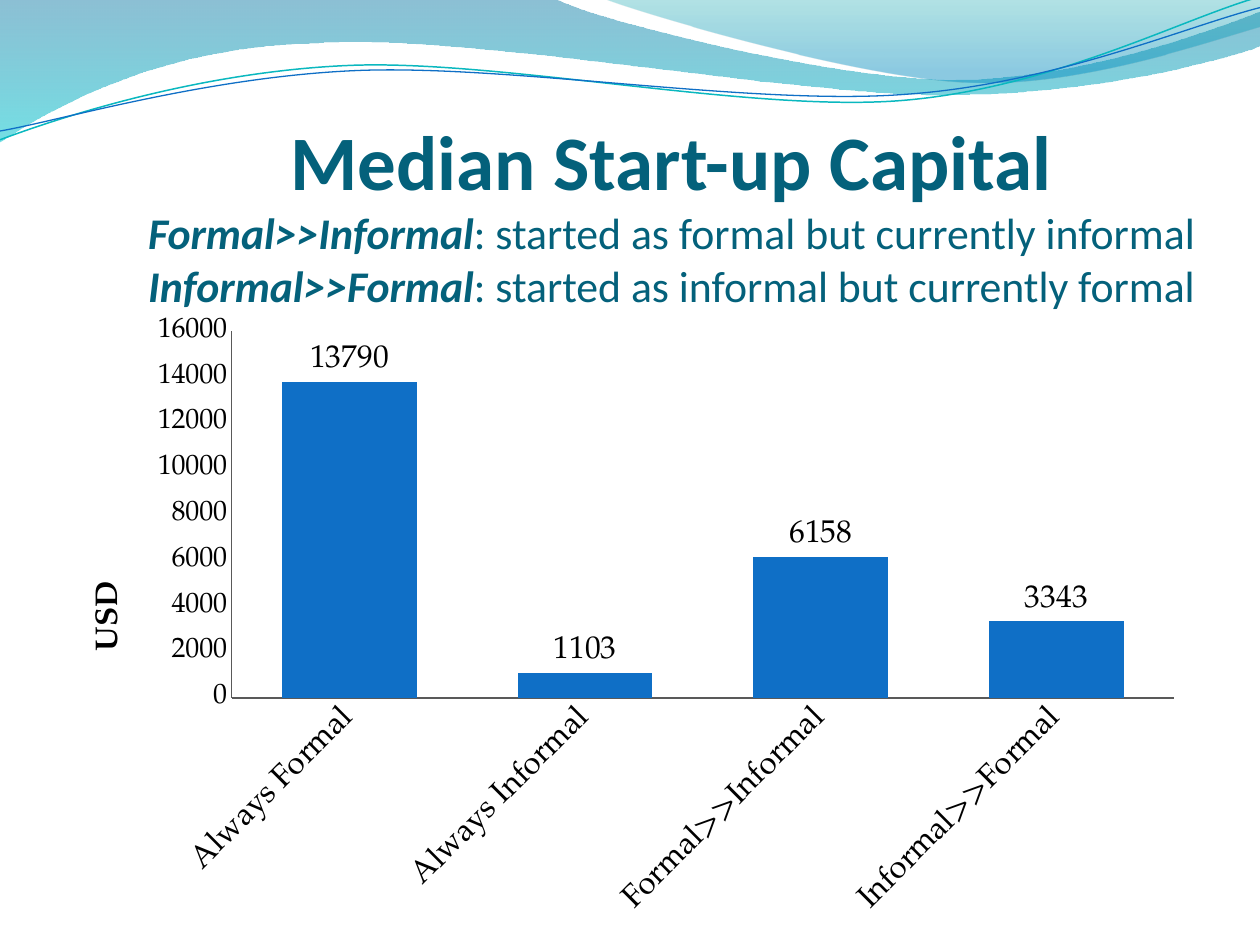
from math import cos, radians, sin

from lxml import etree
from pptx import Presentation
from pptx.chart.data import CategoryChartData
from pptx.dml.color import RGBColor
from pptx.enum.chart import XL_CHART_TYPE, XL_LABEL_POSITION, XL_TICK_MARK
from pptx.enum.text import MSO_ANCHOR, MSO_AUTO_SIZE, PP_ALIGN
from pptx.oxml.ns import qn
from pptx.util import Inches, Pt

COLUMNS = XL_CHART_TYPE.COLUMN_CLUSTERED
OUTSIDE_END = XL_LABEL_POSITION.OUTSIDE_END
NO_TICK = XL_TICK_MARK.NONE
TITLE_ONLY = 5

COLORS = {"title": "04617B", "blue": "0F6FC6", "teal": "0AB8BF",
          "text": "000000", "axis": "595959"}
TITLE_FONT, CHART_FONT = "Calibri", "TeX Gyre Pagella"

# Each outline is a list of points (lines) and six-number tuples (Bézier curves),
# in inches as seen on the slide, after the turn of the wave's box.
# Gradient stops are position, colour and opacity in percent.
WAVES = [
    {"box": (-0.01, -0.01, 10.02, 1.14), "turn": 0,
     "outline": [(0, 0), (4.4, -0.01), (4.76, 0.17, 6.64, 0.63, 7.58, 0.63),
                 (8.53, 0.63, 9.58, 0.26, 10, 0.09), (10.01, 0.36),
                 (9.83, 0.44, 8.7, 0.76, 7.46, 0.75),
                 (6.22, 0.75, 3.82, 0.28, 2.57, 0.34),
                 (1.29, 0.36, 0.46, 0.83, -0.01, 1.13), (0, 0)],
     "stops": [(0, "0074A1", 45), (1, "00C6CF", 55)]},
    {"box": (4.79, -0.01, 5.21, 0.7), "turn": 0,
     "outline": [(4.79, -0.01), (5.09, 0.11, 6.82, 0.62, 7.69, 0.65),
                 (8.56, 0.69, 9.61, 0.32, 10, 0.21), (10, 0), (4.79, -0.01)],
     "stops": [(0, "00A1A9", 30), (0.8, "008BBF", 45)]},
    {"box": (-0.02, 0.22, 10.02, 0.71), "turn": -2.7,
     "outline": [(0, 1.11), (0.48, 0.93, 1.58, 0.57, 2.77, 0.52),
                 (3.95, 0.47, 5.93, 0.89, 7.13, 0.8),
                 (8.33, 0.71, 9.38, 0.15, 9.98, -0.02)],
     "line": ("teal", 0.85)},
    {"box": (-0.02, 0.3, 10.03, 0.58), "turn": -2.7,
     "outline": [(0, 1.04), (0.47, 0.96, 1.64, 0.61, 2.83, 0.56),
                 (4.03, 0.51, 5.97, 0.84, 7.17, 0.75),
                 (8.36, 0.67, 9.41, 0.21, 10, 0.06)],
     "line": ("blue", 0.75)},
]

TITLE_RUNS = [
    ("Median Start-up Capital", {"size": Pt(44), "bold": True}),
    None,
    ("Formal>>Informal", {"bold": True, "italic": True}),
    (": started as formal but currently informal", {}),
    None,
    ("Informal>>Formal", {"bold": True, "italic": True}),
    (": started as informal but currently formal", {}),
]

CAPITAL = {"Always Formal": 13790, "Always Informal": 1103,
           "Formal>>Informal": 6158, "Informal>>Formal": 3343}


def rgb(name):
    return RGBColor.from_string(COLORS.get(name, name))


def set_font(font, **values):
    color = values.pop("color", None)
    for key, value in values.items():
        setattr(font, key, value)
    if color:
        font.color.rgb = rgb(color)


def draw_outline(sp, wave):
    """Write lines and curves into the freeform, relative to its unturned box."""
    left, top, width, height = wave["box"]
    angle = radians(-wave["turn"])
    outline = next(sp._element.iter(qn("a:path")))
    for child in list(outline):
        outline.remove(child)
    for i, part in enumerate(wave["outline"]):
        tag = "moveTo" if i == 0 else "lnTo" if len(part) == 2 else "cubicBezTo"
        step = etree.SubElement(outline, qn("a:" + tag))
        for x, y in zip(part[::2], part[1::2]):
            dx, dy = x - left - width / 2, y - top - height / 2
            px = width / 2 + dx * cos(angle) - dy * sin(angle)
            py = height / 2 + dx * sin(angle) + dy * cos(angle)
            etree.SubElement(step, qn("a:pt"), x=str(Inches(px)), y=str(Inches(py)))
    if "stops" in wave:
        etree.SubElement(outline, qn("a:close"))


def fill_gradient(fill, stops):
    fill.gradient()
    fill.gradient_angle = 270
    for stop, (position, color, _) in zip(fill.gradient_stops, stops):
        stop.position = position
        stop.color.rgb = rgb(color)
    for clr, (_, _, opacity) in zip(fill._xPr.iter(qn("a:srgbClr")), stops):
        etree.SubElement(clr, qn("a:alpha"), val=str(opacity * 1000))


def add_waves(slide, left, top):
    for wave in WAVES:
        x, y, width, height = (Inches(v) for v in wave["box"])
        builder = slide.shapes.build_freeform(left + x, top + y)
        builder.add_line_segments([(left + x + width, top + y + height)], close=False)
        sp = builder.convert_to_shape()
        sp.shadow.inherit = False
        sp.rotation = wave["turn"]
        draw_outline(sp, wave)
        if "stops" in wave:
            fill_gradient(sp.fill, wave["stops"])
            sp.line.fill.background()
        else:
            color, weight = wave["line"]
            sp.fill.background()
            sp.line.color.rgb = rgb(color)
            sp.line.width = Pt(weight)


def add_title(slide, left, top, width, height):
    title = slide.shapes.title
    title.left, title.top, title.width, title.height = left, top, width, height
    tf = title.text_frame
    frame = {"margin_left": 0, "margin_right": 0, "margin_bottom": 0,
             "margin_top": Inches(0.05), "word_wrap": True,
             "auto_size": MSO_AUTO_SIZE.NONE,
             "vertical_anchor": MSO_ANCHOR.BOTTOM}
    for key, value in frame.items():
        setattr(tf, key, value)
    p = tf.paragraphs[0]
    p.alignment = PP_ALIGN.CENTER
    base = {"name": TITLE_FONT, "size": Pt(25), "color": "title"}
    for item in TITLE_RUNS:
        if item is None:
            p.add_line_break()
            continue
        r = p.add_run()
        r.text = item[0]
        set_font(r.font, **{**base, **item[1]})


def add_layout(parent, index, **values):
    """Give a plot area or an axis title a manual place, in chart fractions."""
    for old in parent.findall(qn("c:layout")):
        parent.remove(old)
    layout = etree.Element(qn("c:layout"))
    manual = etree.SubElement(layout, qn("c:manualLayout"))
    for key, value in values.items():
        etree.SubElement(manual, qn("c:" + key), val=str(value))
    parent.insert(index, layout)


def add_capital_chart(slide, left, top, width, height):
    data = CategoryChartData(number_format="0")
    data.categories = list(CAPITAL)
    data.add_series("Series 1", list(CAPITAL.values()))
    chart = slide.shapes.add_chart(COLUMNS, left, top, width, height, data).chart
    chart.has_legend = chart.has_title = False
    set_font(chart.font, name=CHART_FONT, size=Pt(10), color="text")

    plot = chart.plots[0]
    plot.gap_width = 75
    plot.vary_by_categories = False
    fill = plot.series[0].format.fill
    fill.solid()
    fill.fore_color.rgb = rgb("blue")
    labels = plot.series[0].data_labels
    labels.show_value = True
    labels.position = OUTSIDE_END
    set_font(labels.font, size=Pt(18), name=CHART_FONT, color="text")

    cat, val = chart.category_axis, chart.value_axis
    for axis, size in ((cat, 18), (val, 16)):
        axis.has_major_gridlines = False
        axis.major_tick_mark = axis.minor_tick_mark = NO_TICK
        axis.format.line.color.rgb = rgb("axis")
        axis.format.line.width = Pt(0.75)
        set_font(axis.tick_labels.font, size=Pt(size), name=CHART_FONT, color="text")
    cat._element.find(qn("c:txPr")).find(qn("a:bodyPr")).set("rot", "-2700000")
    val.minimum_scale, val.maximum_scale, val.major_unit = 0, 16000, 2000

    tf = val.axis_title.text_frame
    tf.text = "USD"
    tf._txBody.find(qn("a:bodyPr")).set("rot", "-5400000")
    set_font(tf.paragraphs[0].runs[0].font, size=Pt(18), bold=True,
             name=CHART_FONT, color="text")
    add_layout(val.axis_title._element, 1, xMode="edge", yMode="edge",
               x=Inches(0.18) / width, y=Inches(2.15) / height)
    add_layout(chart._chartSpace.chart.plotArea, 0, layoutTarget="inner",
               xMode="edge", yMode="edge",
               x=Inches(1.34) / width, y=Inches(0.21) / height,
               w=Inches(7.48) / width, h=Inches(2.91) / height)


def main():
    prs = Presentation()
    prs.slide_width, prs.slide_height = Inches(10), Inches(7.5)
    slide = prs.slides.add_slide(prs.slide_layouts[TITLE_ONLY])
    add_waves(slide, 0, 0)
    add_title(slide, Inches(0.83), Inches(0.58), Inches(9), Inches(1.89))
    add_capital_chart(slide, Inches(0.5), Inches(2.42), Inches(9), Inches(4.95))
    prs.save("out.pptx")


if __name__ == "__main__":
    main()
